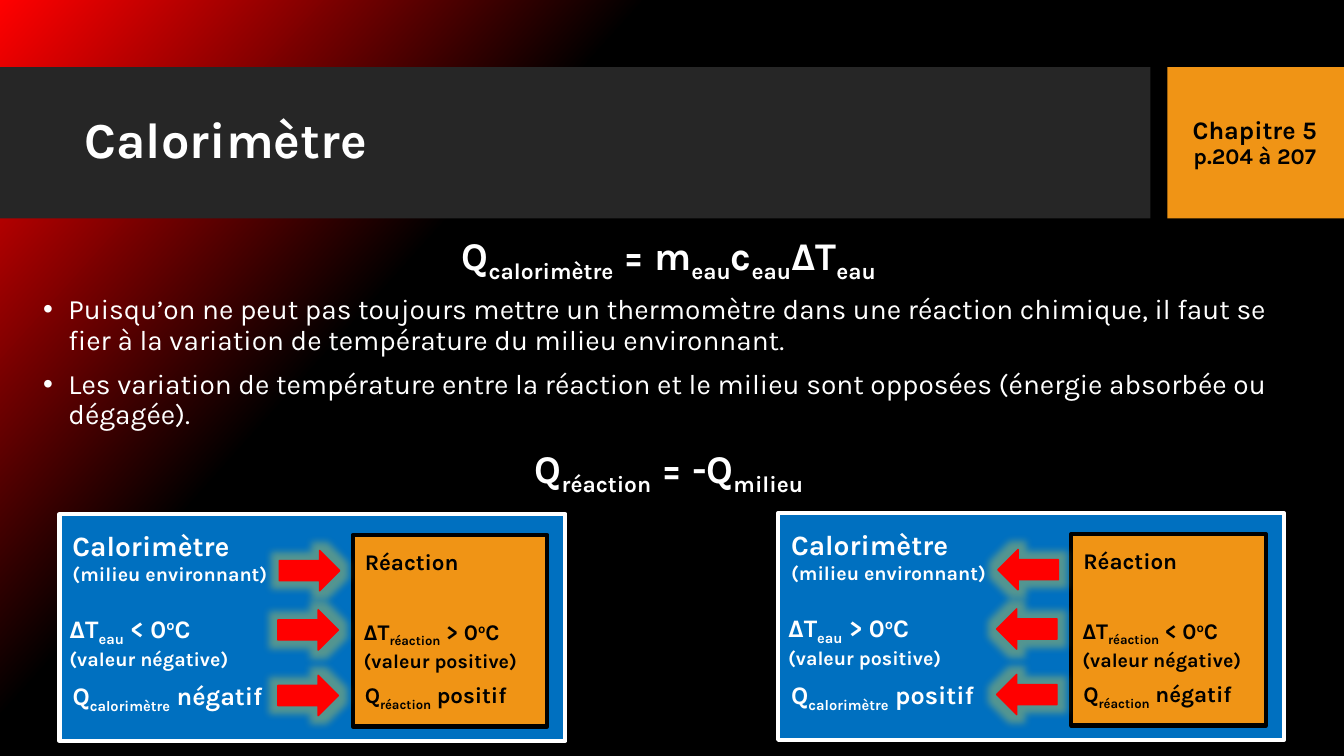
from copy import deepcopy

from lxml import etree
from pptx import Presentation
from pptx.dml.color import RGBColor
from pptx.enum.shapes import MSO_SHAPE
from pptx.enum.text import MSO_ANCHOR, PP_ALIGN
from pptx.oxml.ns import qn
from pptx.util import Pt

RECT, ARROW = MSO_SHAPE.RECTANGLE, MSO_SHAPE.RIGHT_ARROW
TOP, MIDDLE = MSO_ANCHOR.TOP, MSO_ANCHOR.MIDDLE
LEFT, CENTER = PP_ALIGN.LEFT, PP_ALIGN.CENTER
WHITE, BLACK, RED = "FFFFFF", "000000", "FF0000"
ORANGE, BLUE, GREY, GLOW = "F09415", "0070C0", "262626", "D5D04A"


def rgb(value):
    return RGBColor.from_string(value)


def para(text, size=16, bold=True, align=LEFT, spacing=None, before=0, bullet=False):
    return dict(text=text, size=size, bold=bold, align=align,
                spacing=spacing, before=before, bullet=bullet)


def split_runs(text):
    for i, part in enumerate(text.split("_")):
        if i % 2:
            yield part, -25000
            continue
        for j, piece in enumerate(part.split("^")):
            if piece:
                yield piece, 30000 if j % 2 else 0


class Slide:
    font = "Karla"

    def __init__(self, prs):
        self.s = prs.slides.add_slide(prs.slide_layouts[6])

    def background(self, start, end, stop, angle):
        fill = self.s.background.fill
        fill.gradient()
        fill.gradient_angle = 360 - angle
        first, last = fill.gradient_stops
        first.color.rgb, last.color.rgb = rgb(start), rgb(end)
        first.position, last.position = 0, stop
        gs = self.s.background._cSld.findall(".//" + qn("a:gs"))[-1]
        tail = deepcopy(gs)
        tail.set("pos", "100000")
        gs.addnext(tail)

    def shape(self, kind, box, fill, line=None, width=3, rotation=0):
        sp = self.s.shapes.add_shape(kind, *map(Pt, box))
        sp.shadow.inherit = False
        sp.rotation = rotation
        sp.fill.solid()
        sp.fill.fore_color.rgb = rgb(fill)
        if line:
            sp.line.color.rgb = rgb(line)
            sp.line.width = Pt(width)
        else:
            sp.line.fill.background()
        return sp

    def arrow(self, box, rotation):
        sp = self.shape(ARROW, box, RED, RED, 1, rotation)
        effects = sp._element.spPr.find(qn("a:effectLst"))
        glow = etree.SubElement(effects, qn("a:glow"), rad=str(Pt(11)))
        color = etree.SubElement(glow, qn("a:srgbClr"), val=GLOW)
        etree.SubElement(color, qn("a:alpha"), val="40000")

    def text(self, box, *paras, color=WHITE, anchor=TOP):
        tf = self.s.shapes.add_textbox(*map(Pt, box)).text_frame
        tf.word_wrap = True
        tf.vertical_anchor = anchor
        for i, fmt in enumerate(paras):
            p = tf.add_paragraph() if i else tf.paragraphs[0]
            self.fill_paragraph(p, color, **fmt)

    def fill_paragraph(self, p, color, text, size, bold, align, spacing, before, bullet):
        if bullet:
            pPr = p._p.get_or_add_pPr()
            pPr.set("marL", str(Pt(18)))
            pPr.set("indent", str(-Pt(18)))
            etree.SubElement(pPr, qn("a:buFont"), typeface="Arial")
            etree.SubElement(pPr, qn("a:buChar"), char="•")
        p.alignment = align
        if spacing:
            p.line_spacing = spacing
        if before:
            p.space_before = Pt(before)
        for piece, baseline in split_runs(text):
            r = p.add_run()
            r.text = piece
            r.font.name = self.font
            r.font.size = Pt(size)
            r.font.bold = bold
            r.font.color.rgb = rgb(color)
            if baseline:
                r.font._element.set("baseline", str(baseline))

    def calorimeter(self, x, y, water, reaction, rotation):
        water_sign, water_value = water
        reaction_sign, reaction_value = reaction
        self.shape(RECT, (x, y, 361.4, 162), BLUE, WHITE)
        self.shape(RECT, (x + 209.5, y + 15, 139, 136.8), ORANGE, BLACK)
        self.text((x + 2.2, y + 6.5, 180, 48),
                  para("Calorimètre", 20), para("(milieu environnant)", 14))
        self.text((x, y + 67, 186.5, 46),
                  para(f"ΔT_eau_ {water_sign} 0^o^C", 18),
                  para(f"(valeur {water_value}e)".replace("fe)", "ve)"), 14))
        self.text((x + 2.2, y + 115.2, 186.5, 29),
                  para(f"Q_calorimètre_ {water_value}", 18))
        self.text((x + 211, y + 21, 139, 26.6), para("Réaction"), color=BLACK)
        self.text((x + 210.2, y + 70.6, 139, 44),
                  para(f"ΔT_réaction_ {reaction_sign} 0^o^C"),
                  para(f"(valeur {reaction_value}e)".replace("fe)", "ve)"), 14),
                  color=BLACK)
        self.text((x + 211, y + 116, 139, 26.6),
                  para(f"Q_réaction_ {reaction_value}"), color=BLACK)
        for dx, dy in ((157, 26), (156, 68.4), (156, 115.2)):
            self.arrow((x + dx, y + dy, 43.2, 28.8), rotation)


def main():
    prs = Presentation()
    prs.slide_width, prs.slide_height = Pt(960), Pt(540)
    s = Slide(prs)
    s.background(RED, BLACK, 0.32, 42)
    s.shape(RECT, (0, 48, 821.7, 108), GREY)
    s.shape(RECT, (833.8, 48, 126.2, 108), ORANGE)
    s.text((53.3, 59, 756.7, 85), para("Calorimètre", 36, spacing=0.9), anchor=MIDDLE)
    s.text((832.5, 48, 127.5, 108.7),
           para("Chapitre 5", 18, align=CENTER, spacing=0.9),
           para("p.204 à 207", 16, align=CENTER, spacing=0.9),
           color=BLACK, anchor=MIDDLE)
    s.text((23.8, 157, 908, 54),
           para("Q_calorimètre_ = m_eau_c_eau_ΔT_eau_", 28, align=CENTER), anchor=MIDDLE)
    s.text((23.8, 207.4, 908, 148.3),
           para("Puisqu’on ne peut pas toujours mettre un thermomètre dans une réaction "
                "chimique, il faut se fier à la variation de température du milieu "
                "environnant.", 20, False, spacing=0.9, bullet=True),
           para("Les variation de température entre la réaction et le milieu sont "
                "opposées (énergie absorbée ou dégagée).",
                20, False, spacing=0.9, before=10, bullet=True),
           para("Q_réaction_ = -Q_milieu_", 28, align=CENTER, spacing=0.9, before=10),
           anchor=MIDDLE)
    below, above = ("<", "négatif"), (">", "positif")
    s.calorimeter(42.5, 367.2, below, above, 0)
    s.calorimeter(555.8, 366.5, above, below, 180)
    prs.save("out.pptx")


if __name__ == "__main__":
    main()
